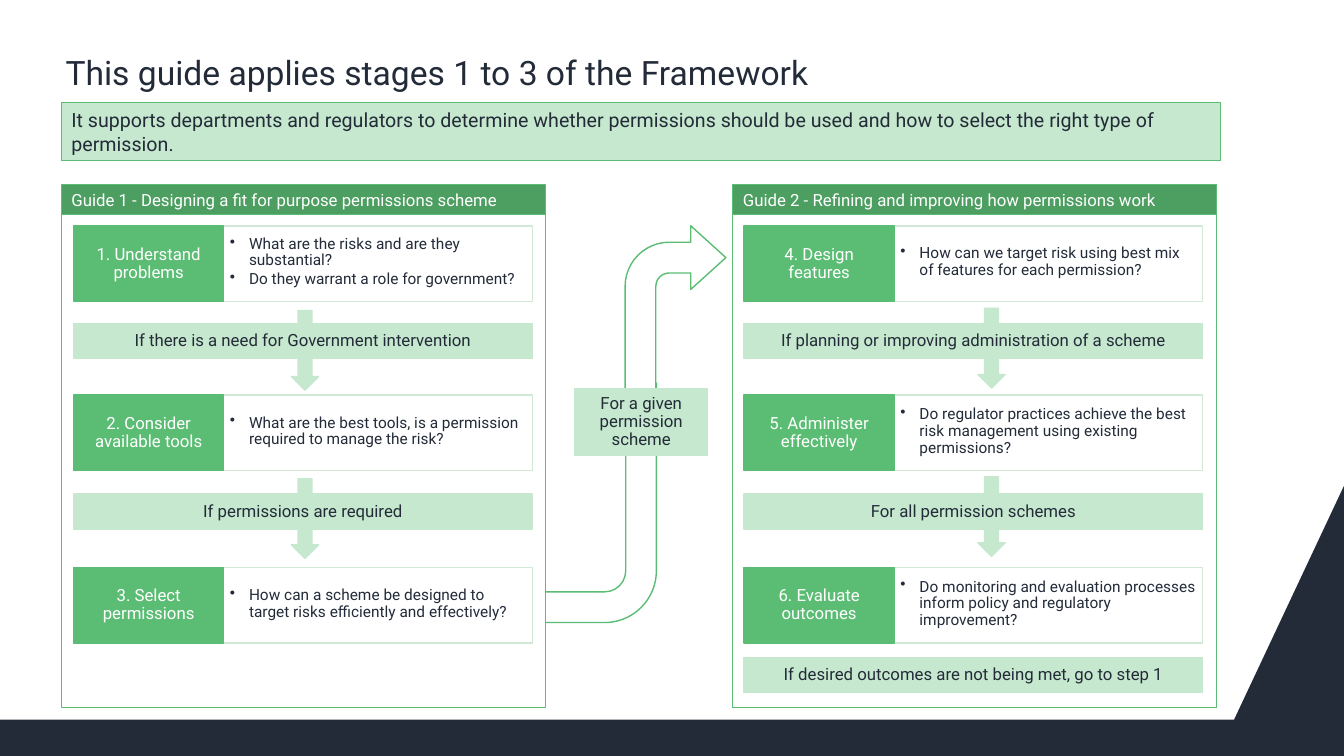
import pptx
import pptx.dml.color
import pptx.enum.shapes
import pptx.enum.text
import pptx.oxml.ns
import pptx.util
from lxml import etree

Inches = pptx.util.Inches
Pt = pptx.util.Pt
RGBColor = pptx.dml.color.RGBColor
SHAPE = pptx.enum.shapes.MSO_SHAPE
ALIGN = pptx.enum.text.PP_ALIGN
ANCHOR = pptx.enum.text.MSO_ANCHOR

COLORS = {
    "ink": "232B39",
    "white": "FFFFFF",
    "green": "5BBD74",
    "dark green": "4C9E61",
    "pale green": "C6E8CE",
    "pale line": "D2E8D6",
}

presentation = pptx.Presentation()
presentation.slide_width = Inches(13.33)
presentation.slide_height = Inches(7.5)
slide = presentation.slides.add_slide(presentation.slide_layouts[5])


def write(shape, text, size=12, color="ink", align=ALIGN.CENTER, anchor=ANCHOR.MIDDLE,
          insets=(0.1, 0.06, 0.1, 0.06), spacing=0.9, after=0, bullet=False):
    """Fill a shape with text, one paragraph per line; insets run left, top, right, bottom."""
    frame = shape.text_frame
    frame.word_wrap = True
    frame.auto_size = pptx.enum.text.MSO_AUTO_SIZE.NONE
    frame.vertical_anchor = anchor
    frame.margin_left, frame.margin_top, frame.margin_right, frame.margin_bottom = map(Inches, insets)
    frame.text = text
    for paragraph in frame.paragraphs:
        paragraph.alignment = align
        paragraph.line_spacing = spacing
        paragraph.space_before = Pt(0)
        paragraph.space_after = Pt(after)
        for run in paragraph.runs:
            run.font.name = "Roboto"
            run.font.size = Pt(size)
            run.font.color.rgb = RGBColor.from_string(COLORS[color])
        if bullet:
            properties = paragraph._p.get_or_add_pPr()
            properties.set("marL", str(Inches(0.19)))
            properties.set("indent", str(Inches(-0.19)))
            etree.SubElement(properties, pptx.oxml.ns.qn("a:buChar")).set("char", "•")


def add_box(left, top, width, height, fill, line, line_width=1, kind=SHAPE.RECTANGLE, adjust=()):
    shape = slide.shapes.add_shape(kind, Inches(left), Inches(top), Inches(width), Inches(height))
    shape.shadow.inherit = False
    shape.fill.solid()
    shape.fill.fore_color.rgb = RGBColor.from_string(COLORS[fill])
    shape.line.color.rgb = RGBColor.from_string(COLORS[line])
    shape.line.width = Pt(line_width)
    for index, value in enumerate(adjust):
        shape.adjustments[index] = value
    return shape


# Dark footer rising at the right edge
outline = slide.shapes.build_freeform(Inches(12.24), Inches(7.14))
outline.add_line_segments([(Inches(x), Inches(y)) for x, y in
                           [(0, 7.14), (0, 7.5), (13.33, 7.5), (13.33, 4.82)]], close=True)
footer = outline.convert_to_shape()
footer.shadow.inherit = False
footer.fill.solid()
footer.fill.fore_color.rgb = RGBColor.from_string(COLORS["ink"])
footer.line.fill.background()

title = slide.shapes.title
title.left, title.top, title.width, title.height = map(Inches, (0.61, 0.34, 11.5, 0.79))
write(title, "This guide applies stages 1 to 3 of the Framework", size=24, align=ALIGN.LEFT,
      insets=(0.04, 0.05, 0.04, 0.05))

summary = add_box(0.61, 1.02, 11.5, 0.57, "pale green", "green", 0.75)
write(summary, "It supports departments and regulators to determine whether permissions should be used "
      "and how to select the right type of permission.", size=14, align=ALIGN.LEFT,
      insets=(0.1, 0.05, 0.1, 0.05), spacing=1)

# The path from guide 1 to guide 2; the first panel covers the lower arrow's head
lower_path = add_box(4.44, 3.8, 2.07, 2.59, "white", "green", kind=SHAPE.BENT_ARROW,
                     adjust=(0.147, 0.177, 0.393, 0.248))
lower_path.rotation = 180

guides = [
    {"left": 0.61, "inner": 0.73, "arrow": 2.89, "arrow top": 3.08,
     "heading": "Guide 1 - Designing a fit for purpose permissions scheme",
     "steps": [
         ("1. Understand problems",
          "What are the risks and are they substantial?\nDo they warrant a role for government?"),
         ("2. Consider available tools",
          "What are the best tools, is a permission required to manage the risk?"),
         ("3. Select permissions",
          "How can a scheme be designed to target risks efficiently and effectively?")],
     "conditions": ["If there is a need for Government intervention", "If permissions are required"]},
    {"left": 7.27, "inner": 7.38, "arrow": 9.7, "arrow top": 3.06,
     "heading": "Guide 2 - Refining and improving how permissions work",
     "steps": [
         ("4. Design features",
          "How can we target risk using best mix of features for each permission?"),
         ("5. Administer effectively",
          "Do regulator practices achieve the best risk management using existing permissions?"),
         ("6. Evaluate outcomes",
          "Do monitoring and evaluation processes inform policy and regulatory improvement?")],
     "conditions": ["If planning or improving administration of a scheme", "For all permission schemes",
                    "If desired outcomes are not being met, go to step 1"]},
]
step_tops = [2.24, 3.92, 5.63]
condition_tops = [3.21, 4.9, 6.52]

for guide in guides:
    add_box(guide["left"], 2.09, 4.8, 4.93, "white", "green", 0.75)
    heading = add_box(guide["left"], 1.83, 4.8, 0.3, "dark green", "green", 0.75)
    write(heading, guide["heading"], color="white", align=ALIGN.LEFT, anchor=ANCHOR.TOP,
          insets=(0.1, 0.05, 0.1, 0.05), spacing=1)

    for top, (step_name, questions) in zip(step_tops, guide["steps"]):
        question_box = add_box(guide["inner"] + 1.49, top, 3.06, 0.75, "white", "pale line")
        write(question_box, questions, size=11, align=ALIGN.LEFT,
              insets=(0.06, 0.06, 0.06, 0.09), after=1.65, bullet=True)
        step = add_box(guide["inner"], top, 1.49, 0.75, "green", "green")
        write(step, step_name, color="white", after=4.2)

    for row in range(2):
        add_box(guide["arrow"], guide["arrow top"] + row * 1.67, 0.27, 0.79, "pale green", "pale green",
                kind=SHAPE.DOWN_ARROW, adjust=(0.508, 0.5))

    for top, condition_text in zip(condition_tops, guide["conditions"]):
        condition = add_box(guide["inner"], top, 4.55, 0.35, "pale green", "pale green")
        write(condition, condition_text, after=4.2)

add_box(6.2, 2.24, 1, 1.74, "white", "green", kind=SHAPE.BENT_ARROW,
        adjust=(0.305, 0.316, 0.349, 0.438))
path_label = add_box(5.7, 3.86, 1.32, 0.66, "pale green", "pale green")
write(path_label, "For a given permission scheme", after=4.2)

presentation.save("out.pptx")
